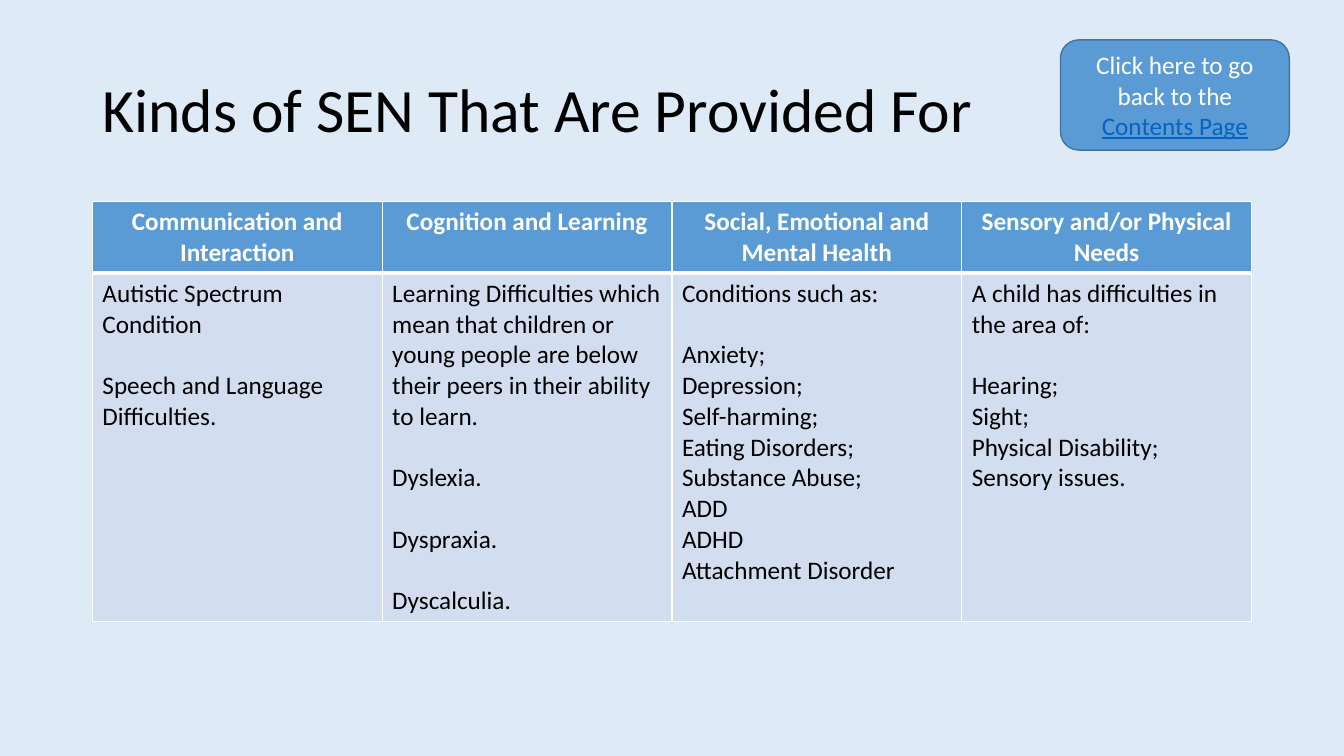
"""Build a slide that lists the kinds of SEN provided for, by area of need."""
from dataclasses import dataclass
from typing import NamedTuple

from lxml import etree
from pptx import Presentation
from pptx import util as u
from pptx.dml.color import RGBColor
from pptx.enum import shapes, text
from pptx.oxml import ns

PX = 9525


@dataclass(frozen=True)
class Theme:
    font: str = "Calibri"
    title_pt: int = 44
    body_pt: int = 18
    gap_pt: int = 22
    rule_pt: int = 1
    header_rule_pt: int = 3
    background: str = "DEEBF7"
    accent: str = "5B9BD5"
    outline: str = "43739E"
    band: str = "D2DEEF"
    link: str = "0563C1"
    dark: str = "000000"
    light: str = "FFFFFF"


class Box(NamedTuple):
    left: int
    top: int
    width: int
    height: int

    def emu(self) -> list[int]:
        return [px(n) for n in self]


class Para(NamedTuple):
    text: str
    gap: bool = False


class Area(NamedTuple):
    heading: str
    paras: list[Para]


THEME = Theme()
SLIDE = (1280, 720)
TITLE = Box(88, 38, 1104, 139)
TABLE = Box(88, 192, 1104, 399)
HEADER_HEIGHT = 67
BUTTON = Box(1010, 38, 218, 105)

AREAS = [
    Area("Communication and Interaction", [
        Para("Autistic Spectrum Condition"),
        Para("Speech and Language Difficulties.", gap=True),
    ]),
    Area("Cognition and Learning", [
        Para("Learning Difficulties which mean that children or young people "
             "are below their peers in their ability to learn."),
        Para("Dyslexia.", gap=True),
        Para("Dyspraxia.", gap=True),
        Para("Dyscalculia.", gap=True),
    ]),
    Area("Social, Emotional and Mental Health", [
        Para("Conditions such as:"),
        Para("Anxiety;", gap=True),
        Para("Depression;"),
        Para("Self-harming;"),
        Para("Eating Disorders;"),
        Para("Substance Abuse;"),
        Para("ADD"),
        Para("ADHD"),
        Para("Attachment Disorder"),
    ]),
    Area("Sensory and/or Physical Needs", [
        Para("A child has difficulties in the area of:"),
        Para("Hearing;", gap=True),
        Para("Sight;"),
        Para("Physical Disability;"),
        Para("Sensory issues."),
    ]),
]


def px(n: int) -> int:
    return u.Emu(n * PX)


def rgb(color: str) -> RGBColor:
    return RGBColor.from_string(color)


def fill(target, color: str) -> None:
    target.fill.solid()
    target.fill.fore_color.rgb = rgb(color)


def write(p, words: str, *, size: int = THEME.body_pt, color: str = THEME.dark,
          bold: bool = False, underline: bool = False,
          align=text.PP_ALIGN.LEFT, before: int = 0) -> None:
    p.alignment = align
    p.space_before = u.Pt(before)
    r = p.add_run()
    r.text = words
    r.font.name = THEME.font
    r.font.size = u.Pt(size)
    r.font.bold = bold
    r.font.underline = underline
    r.font.color.rgb = rgb(color)


def set_borders(cell, top: int, bottom: int) -> None:
    side = THEME.rule_pt
    edges = [("lnL", side), ("lnR", side), ("lnT", top), ("lnB", bottom)]
    tc_pr = cell._tc.get_or_add_tcPr()
    for i, (tag, width) in enumerate(edges):
        ln = etree.Element(ns.qn(f"a:{tag}"), w=str(u.Pt(width)))
        solid = etree.SubElement(ln, ns.qn("a:solidFill"))
        etree.SubElement(solid, ns.qn("a:srgbClr"), val=THEME.light)
        tc_pr.insert(i, ln)


def add_title(s) -> None:
    sp = s.shapes.title
    sp.left, sp.top, sp.width, sp.height = TITLE.emu()
    tf = sp.text_frame
    tf.word_wrap = True
    tf.auto_size = text.MSO_AUTO_SIZE.NONE
    tf.vertical_anchor = text.MSO_ANCHOR.MIDDLE
    p = tf.paragraphs[0]
    p.line_spacing = 0.9
    write(p, "Kinds of SEN That Are Provided For", size=THEME.title_pt)


def add_areas(s) -> None:
    table = s.shapes.add_table(2, len(AREAS), *TABLE.emu()).table
    table.horz_banding = False
    table.rows[0].height = px(HEADER_HEIGHT)
    table.rows[1].height = px(TABLE.height - HEADER_HEIGHT)
    for col, area in enumerate(AREAS):
        table.columns[col].width = px(TABLE.width // len(AREAS))

        header = table.cell(0, col)
        fill(header, THEME.accent)
        set_borders(header, THEME.rule_pt, THEME.header_rule_pt)
        write(header.text_frame.paragraphs[0], area.heading, bold=True,
              color=THEME.light, align=text.PP_ALIGN.CENTER)

        body = table.cell(1, col)
        fill(body, THEME.band)
        set_borders(body, THEME.header_rule_pt, THEME.rule_pt)
        tf = body.text_frame
        for i, para in enumerate(area.paras):
            p = tf.add_paragraph() if i else tf.paragraphs[0]
            write(p, para.text, before=THEME.gap_pt if para.gap else 0)


def add_button(s) -> None:
    sp = s.shapes.add_shape(shapes.MSO_SHAPE.ROUNDED_RECTANGLE, *BUTTON.emu())
    sp.shadow.inherit = False
    fill(sp, THEME.accent)
    sp.line.color.rgb = rgb(THEME.outline)
    sp.line.width = u.Pt(THEME.rule_pt)
    tf = sp.text_frame
    tf.word_wrap = True
    tf.vertical_anchor = text.MSO_ANCHOR.MIDDLE
    p = tf.paragraphs[0]
    center = text.PP_ALIGN.CENTER
    write(p, "Click here to go back to the ", color=THEME.light, align=center)
    write(p, "Contents Page", color=THEME.link, underline=True, align=center)


def main() -> None:
    prs = Presentation()
    prs.slide_width, prs.slide_height = map(px, SLIDE)
    s = prs.slides.add_slide(prs.slide_layouts.get_by_name("Title Only"))
    fill(s.background, THEME.background)
    add_title(s)
    add_areas(s)
    add_button(s)
    prs.save("out.pptx")


if __name__ == "__main__":
    main()
